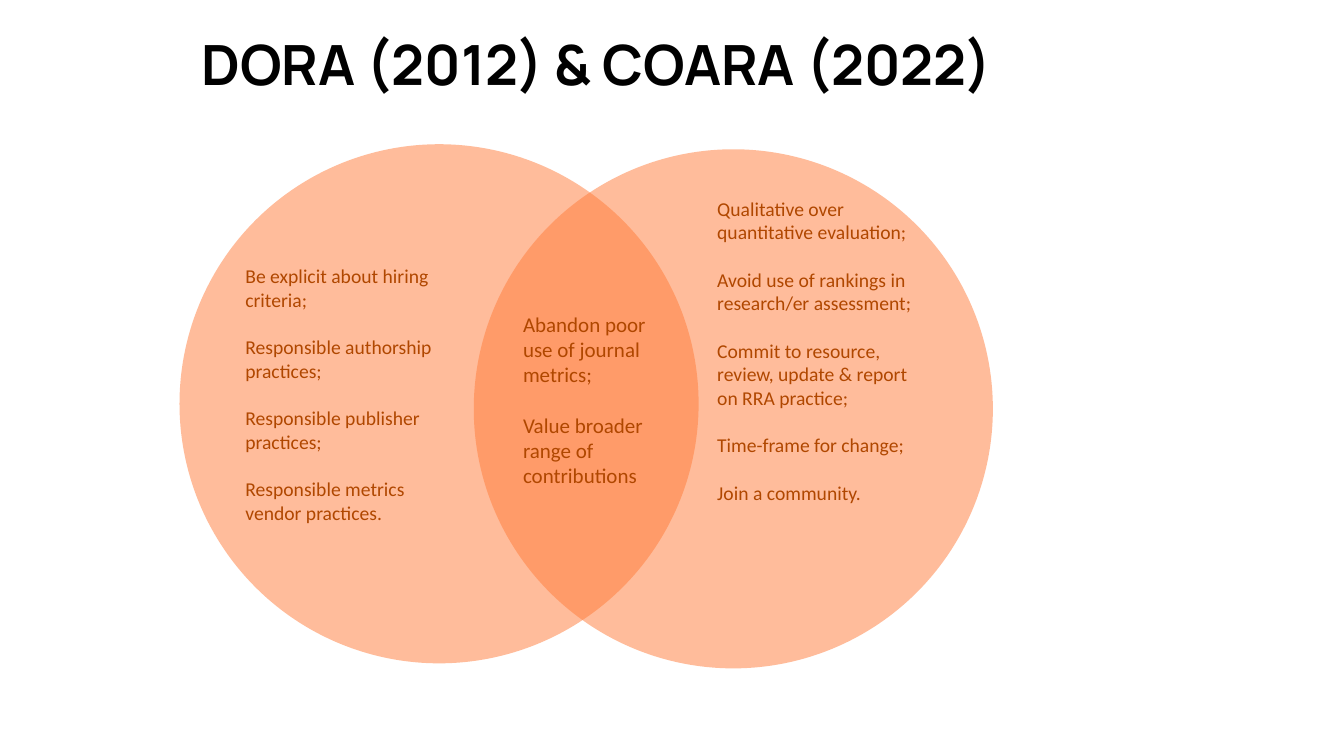
from pptx import Presentation
from pptx.dml.color import RGBColor
from pptx.enum.shapes import MSO_SHAPE as Shape
from pptx.enum.text import MSO_ANCHOR as Anchor
from pptx.oxml.ns import qn
from pptx.util import Pt
from lxml.etree import SubElement

BLACK = RGBColor(0x00, 0x00, 0x00)
ORANGE = RGBColor(0xFF, 0x7B, 0x38)
RUST = RGBColor(0xB0, 0x47, 0x00)

DORA = [
    "Be explicit about hiring criteria;",
    "Responsible authorship practices;",
    "Responsible publisher practices;",
    "Responsible metrics vendor practices.",
]
SHARED = [
    "Abandon poor use of journal metrics;",
    "Value broader range of contributions",
]
COARA = [
    "Qualitative over quantitative evaluation;",
    "Avoid use of rankings in research/er assessment;",
    "Commit to resource, review, update & report on RRA practice;",
    "Time-frame for change;",
    "Join a community.",
]


class VennSlide:
    heading_font = "Manrope"
    body_font = "Calibri"
    diameter = 370.8
    line_height = 1.22

    def __init__(self, presentation):
        self.slide = presentation.slides.add_slide(presentation.slide_layouts[6])

    def circle(self, left, top):
        shape = self.slide.shapes.add_shape(
            Shape.OVAL, Pt(left), Pt(top), Pt(self.diameter), Pt(self.diameter))
        shape.shadow.inherit = False
        shape.fill.solid()
        shape.fill.fore_color.rgb = ORANGE
        color = shape._element.spPr.find(qn("a:solidFill"))[0]
        SubElement(color, qn("a:alpha"), val="50000")
        shape.line.fill.background()

    def text_frame(self, left, top, width, height):
        box = self.slide.shapes.add_textbox(Pt(left), Pt(top), Pt(width), Pt(height))
        frame = box.text_frame
        frame.word_wrap = True
        frame.vertical_anchor = Anchor.TOP
        return frame

    def add_text(self, paragraph, text, font, size, color, bold=False):
        run = paragraph.add_run()
        run.text = text
        run.font.name = font
        run.font.size = Pt(size)
        run.font.color.rgb = color
        run.font.bold = bold

    def title(self, text, left, top, width, height):
        paragraph = self.text_frame(left, top, width, height).paragraphs[0]
        paragraph.line_spacing = 0.9
        self.add_text(paragraph, text, self.heading_font, 39.6, BLACK, bold=True)

    def points(self, texts, size, left, top, width, height):
        frame = self.text_frame(left, top, width, height)
        for index, text in enumerate(texts):
            paragraph = frame.add_paragraph() if index else frame.paragraphs[0]
            if index:
                paragraph.space_before = Pt(round(size * self.line_height, 1))
            self.add_text(paragraph, text, self.body_font, size, RUST)


def main():
    presentation = Presentation()
    presentation.slide_width = Pt(960)
    presentation.slide_height = Pt(540)
    venn = VennSlide(presentation)
    venn.title("DORA (2012) & COARA (2022)", 136.8, 23, 599, 69.1)
    venn.circle(128.2, 103)
    venn.circle(338.4, 106.6)
    venn.points(SHARED, 15, 366.5, 218.9, 113.8, 134.6)
    venn.points(DORA, 14, 168.2, 185, 153.4, 220.3)
    venn.points(COARA, 14, 505.2, 136.8, 159.8, 249.8)
    presentation.save("out.pptx")


if __name__ == "__main__":
    main()
